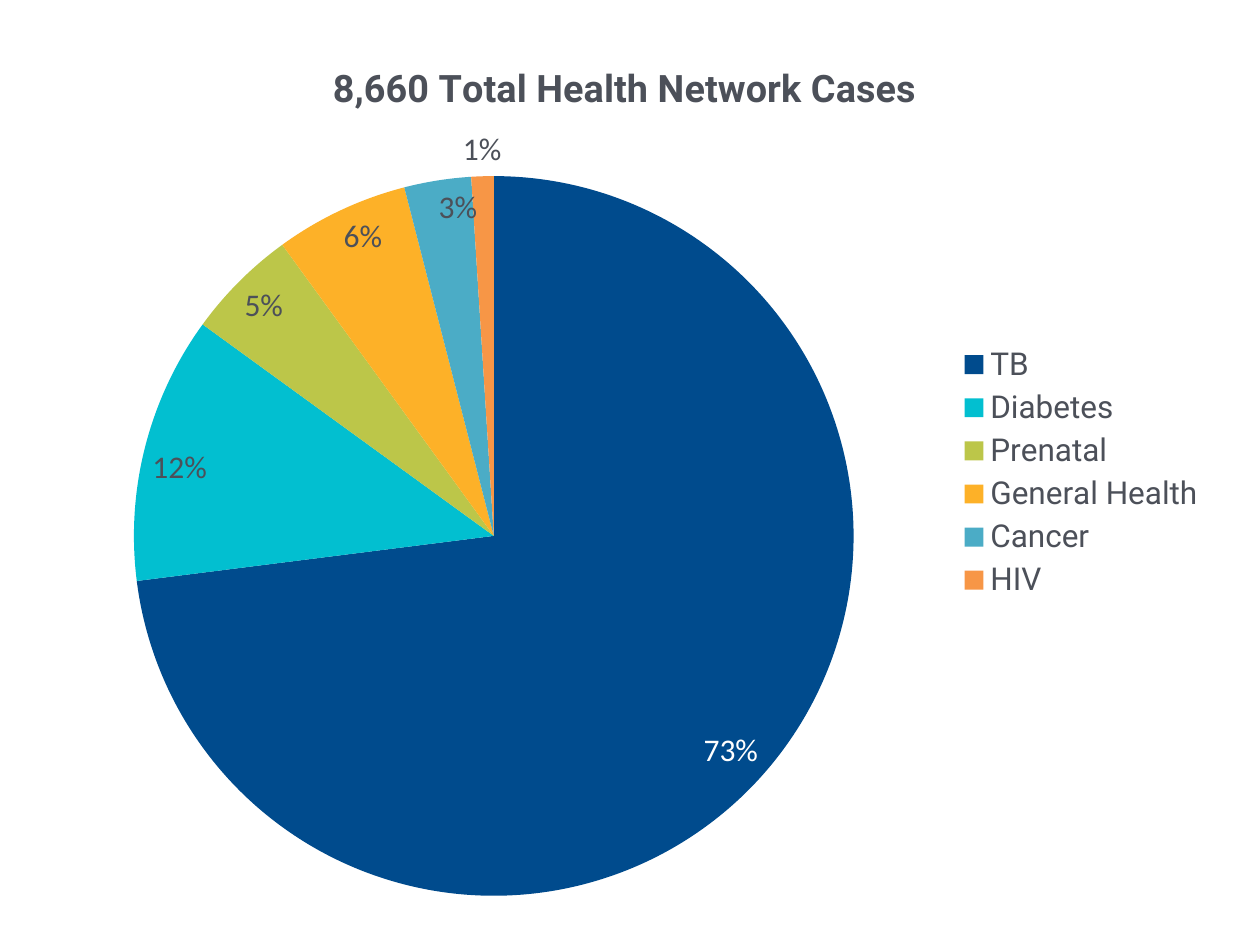
import pptx
import pptx.chart.data
import pptx.dml.color
import pptx.enum.chart
import pptx.oxml
import pptx.util
from pptx.util import Inches


def rgb(value):
    return pptx.dml.color.RGBColor.from_string(value)


def style(font, **values):
    font.color.rgb = rgb(values.pop("color"))
    for name, value in values.items():
        setattr(font, name, value)


GREY = "4C5059"
SIZE = pptx.util.Pt(18)
cases = {
    "TB": (73, "004B8D"),
    "Diabetes": (12, "02BFD0"),
    "Prenatal": (5, "BCC649"),
    "General Health": (6, "FDB128"),
    "Cancer": (3, "4BACC6"),
    "HIV": (1, "F79646"),
}

prs = pptx.Presentation()
prs.slide_width, prs.slide_height = Inches(10), Inches(7.5)
s = prs.slides.add_slide(prs.slide_layouts[6])

# Pie chart
data = pptx.chart.data.CategoryChartData()
data.categories = list(cases)
data.add_series("Series 1", [value for value, color in cases.values()])
chart = s.shapes.add_chart(
    pptx.enum.chart.XL_CHART_TYPE.PIE,
    Inches(0.25), Inches(0.25), Inches(9.42), Inches(7), data,
).chart
style(chart.font, name="Calibri", size=SIZE, color=GREY)

# Title
chart.has_title = True
tf = chart.chart_title.text_frame
tf.text = "8,660 Total Health Network Cases"
style(tf.paragraphs[0].runs[0].font, name="Roboto", size=pptx.util.Pt(21.6),
      bold=True, color=GREY)

# Legend
chart.has_legend = True
chart.legend.position = pptx.enum.chart.XL_LEGEND_POSITION.RIGHT
chart.legend.include_in_layout = False
style(chart.legend.font, name="Roboto", size=SIZE, color=GREY)

# Slice colours
plot = chart.plots[0]
plot.vary_by_categories = True
series = plot.series[0]
for i, (value, color) in enumerate(cases.values()):
    fill = series.points[i].format.fill
    fill.solid()
    fill.fore_color.rgb = rgb(color)

# Percent labels: white on the dark slice, outside the thinnest one
position = pptx.enum.chart.XL_LABEL_POSITION
labels = series.data_labels
labels.show_percentage = True
labels.show_value = False
labels.number_format = "0%"
labels.number_format_is_linked = False
labels.position = position.INSIDE_END
style(labels.font, name="Calibri", size=SIZE, color=GREY)
for i, color, place in ((0, "FFFFFF", position.INSIDE_END),
                        (5, GREY, position.OUTSIDE_END)):
    label = series.points[i].data_label
    style(label.font, name="Calibri", size=SIZE, color=color)
    label.position = place
for label in series._element.xpath("c:dLbls/c:dLbl"):
    label.xpath("c:showVal")[0].set("val", "0")
    label.xpath("c:showPercent")[0].set("val", "1")

# Plot area, as fractions of the chart
area = chart._chartSpace.chart.plotArea
for old in area.xpath("c:layout"):
    area.remove(old)
area.insert(0, pptx.oxml.parse_xml(
    '<c:layout xmlns:c="http://schemas.openxmlformats.org/drawingml/2006/chart">'
    '<c:manualLayout><c:layoutTarget val="inner"/>'
    '<c:xMode val="edge"/><c:yMode val="edge"/>'
    '<c:x val="0.086"/><c:y val="0.164"/><c:w val="0.607"/><c:h val="0.816"/>'
    '</c:manualLayout></c:layout>'))

prs.save("out.pptx")
